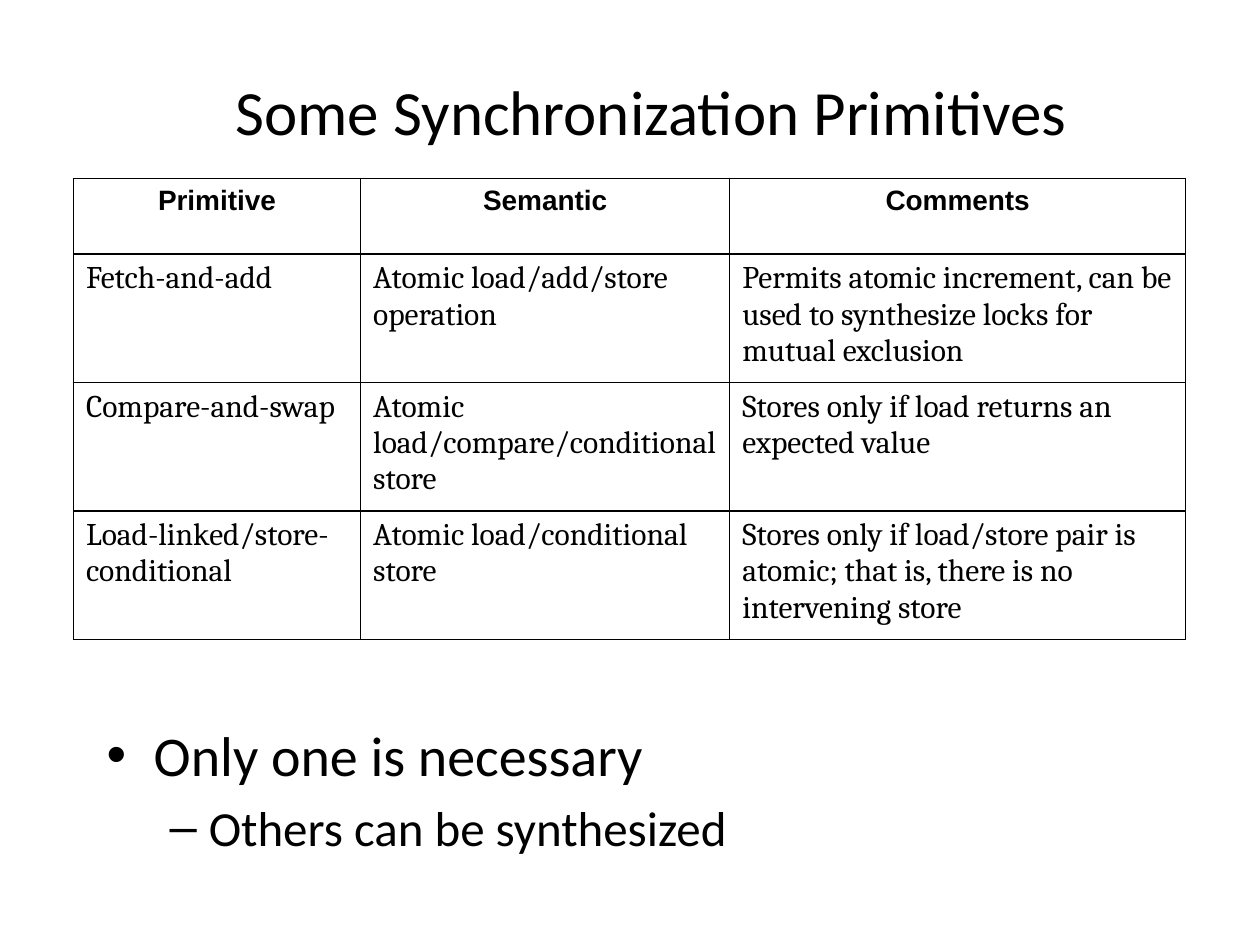
from lxml import etree
from pptx import Presentation
from pptx.dml.color import RGBColor
from pptx.enum.text import MSO_ANCHOR, PP_ALIGN
from pptx.oxml.ns import qn
from pptx.util import Cm, Pt

CENTER, LEFT = PP_ALIGN.CENTER, PP_ALIGN.LEFT
MIDDLE = MSO_ANCHOR.MIDDLE
TITLE_ONLY = 5

COLORS = {"text": "000000", "border": "000000", "paper": "FFFFFF"}

HEADINGS = ["Primitive", "Semantic", "Comments"]
PRIMITIVES = [
    ["Fetch-and-add", "Atomic load/add/store operation",
     "Permits atomic increment, can be used to synthesize locks for mutual exclusion"],
    ["Compare-and-swap", "Atomic load/compare/conditional store",
     "Stores only if load returns an expected value"],
    ["Load-linked/store-conditional", "Atomic load/conditional store",
     "Stores only if load/store pair is atomic; that is, there is no intervening store"],
]
COLUMN_WIDTHS = [5.79, 7.44, 9.19]
HEADING_HEIGHT, ROW_HEIGHT = 1.52, 2.59

# text, bullet, size in points, left margin and hanging indent in cm
BULLETS = [
    ("Only one is necessary", "•", 32, 0.95, 0.95),
    ("Others can be synthesized", "–", 28, 2.06, 0.79),
]


def color(name):
    return RGBColor.from_string(COLORS[name])


def format_paragraph(paragraph, font_name, size, alignment=LEFT, bold=False):
    paragraph.alignment = alignment
    for run in paragraph.runs:
        run.font.name = font_name
        run.font.size = Pt(size)
        run.font.bold = bold
        run.font.color.rgb = color("text")


def add_borders(cell):
    """Draw a one-point line on all four sides of a cell."""
    properties = cell._tc.get_or_add_tcPr()
    for position, side in enumerate(("a:lnL", "a:lnR", "a:lnT", "a:lnB")):
        line = etree.Element(qn(side), w=str(Pt(1)))
        fill = etree.SubElement(line, qn("a:solidFill"))
        etree.SubElement(fill, qn("a:srgbClr"), val=COLORS["border"])
        properties.insert(position, line)


def add_bullet(paragraph, character, margin, hanging):
    properties = paragraph._p.get_or_add_pPr()
    properties.set("marL", str(Cm(margin)))
    properties.set("indent", str(-Cm(hanging)))
    etree.SubElement(properties, qn("a:buFont"), typeface="Arial")
    etree.SubElement(properties, qn("a:buChar"), char=character)


def place_title(slide, left, top, width, height):
    title = slide.shapes.title
    title.left, title.top, title.width, title.height = map(Cm, (left, top, width, height))
    title.text_frame.text = "Some Synchronization Primitives"
    title.text_frame.vertical_anchor = MIDDLE
    format_paragraph(title.text_frame.paragraphs[0], "Calibri", 36, CENTER)


def add_primitives_table(slide, left, top):
    rows = [HEADINGS] + PRIMITIVES
    heights = [HEADING_HEIGHT] + [ROW_HEIGHT] * len(PRIMITIVES)
    table = slide.shapes.add_table(
        len(rows), len(HEADINGS), Cm(left), Cm(top),
        Cm(sum(COLUMN_WIDTHS)), Cm(sum(heights))).table
    for column, width in zip(table.columns, COLUMN_WIDTHS):
        column.width = Cm(width)
    for row_index, (texts, height) in enumerate(zip(rows, heights)):
        table.rows[row_index].height = Cm(height)
        for column_index, text in enumerate(texts):
            cell = table.cell(row_index, column_index)
            cell.text_frame.text = text
            cell.fill.solid()
            cell.fill.fore_color.rgb = color("paper")
            add_borders(cell)
            paragraph = cell.text_frame.paragraphs[0]
            if row_index == 0:
                format_paragraph(paragraph, "Arial", 16, CENTER, bold=True)
            else:
                format_paragraph(paragraph, "Cambria", 18)


def add_conclusion(slide, left, top, width, height):
    text_frame = slide.shapes.add_textbox(*map(Cm, (left, top, width, height))).text_frame
    text_frame.word_wrap = True
    text_frame.text = "\n".join(bullet[0] for bullet in BULLETS)
    for level, (paragraph, bullet) in enumerate(zip(text_frame.paragraphs, BULLETS)):
        _, character, size, margin, hanging = bullet
        paragraph.level = level
        paragraph.space_before = Pt(size * 0.2)
        format_paragraph(paragraph, "Calibri", size)
        add_bullet(paragraph, character, margin, hanging)


def main():
    presentation = Presentation()
    presentation.slide_width, presentation.slide_height = Cm(25.4), Cm(19.05)
    slide = presentation.slides.add_slide(presentation.slide_layouts[TITLE_ONLY])
    place_title(slide, 1.9, 1.27, 22.45, 1.9)
    add_conclusion(slide, 1.9, 14.4, 21.6, 3.18)
    add_primitives_table(slide, 1.48, 3.6)
    presentation.save("out.pptx")


if __name__ == "__main__":
    main()
